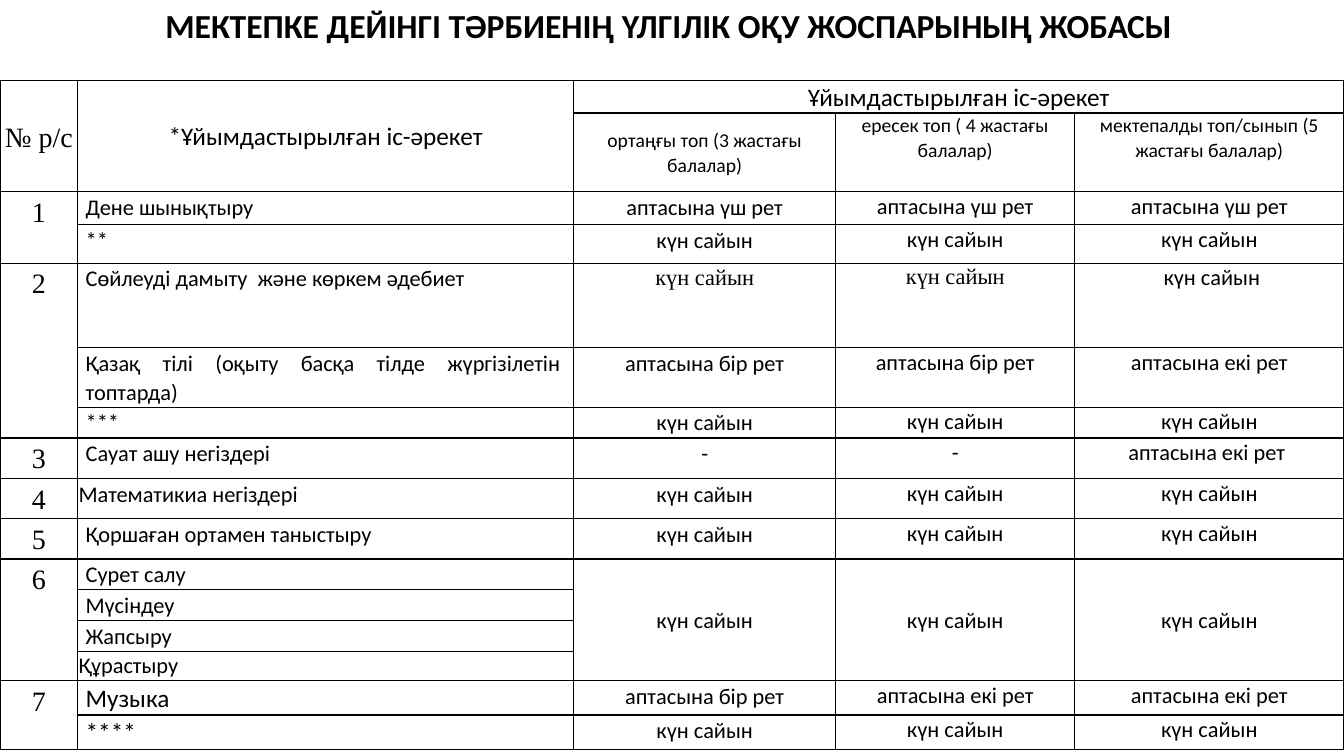
import pptx
import pptx.dml.color
import pptx.enum.text
import pptx.oxml
import pptx.util

Inches, Pt = pptx.util.Inches, pptx.util.Pt
ALIGN, ANCHOR = pptx.enum.text.PP_ALIGN, pptx.enum.text.MSO_ANCHOR

THEME = {
    "ink": "000000", "sans": "Calibri", "serif": "Times New Roman", "border": 1,
    "title": 24, "number": 20, "heading": 18, "body": 16, "group": 14,
}

DAILY, ONCE, TWICE, THRICE = "күн сайын", "аптасына бір рет", "аптасына екі рет", "аптасына үш рет"
ACTIVITY = "Ұйымдастырылған іс-әрекет"

columns = [0.77, 4.92, 2.6, 2.37, 2.67]
rows = [
    (0.31, "№ р/с", "*" + ACTIVITY, ACTIVITY, "", ""),
    (0.78, "", "", "ортаңғы топ (3 жастағы балалар)", "ересек топ ( 4 жастағы балалар)",
     "мектепалды топ/сынып (5 жастағы балалар)"),
    (0.33, "1", "Дене шынықтыру", THRICE, THRICE, THRICE),
    (0.38, "", "**", DAILY, DAILY, DAILY),
    (0.84, "2", "Сөйлеуді дамыту  және көркем әдебиет", DAILY, DAILY, " " + DAILY),
    (0.58, "", "Қазақ тілі (оқыту басқа тілде жүргізілетін топтарда)", ONCE, ONCE, TWICE),
    (0.29, "", "***", DAILY, DAILY, DAILY),
    (0.4, "3", "Сауат ашу негіздері", "-", "-", TWICE + " "),
    (0.4, "4", "Математикиа негіздері", DAILY, DAILY, DAILY),
    (0.4, "5", "Қоршаған ортамен таныстыру", DAILY, DAILY, DAILY),
    (0.3, "6", "Сурет салу ", DAILY, DAILY, DAILY),
    (0.29, "", "Мүсіндеу", "", "", ""),
    (0.3, "", "Жапсыру", "", "", ""),
    (0.29, "", "Құрастыру", "", "", ""),
    (0.33, "7", "Музыка", ONCE, TWICE, TWICE),
    (0.34, "", "****", DAILY, DAILY, DAILY),
]
spans = [(0, 0, 1, 0), (0, 1, 1, 1), (0, 2, 0, 4), (2, 0, 3, 0), (4, 0, 6, 0), (14, 0, 15, 0)]
spans += [(10, column, 13, column) for column in (0, 2, 3, 4)]


def apply_format(target, values):
    for name, value in values.items():
        setattr(target, name, value)


def write_text(para, text, size, font):
    span = para.add_run()
    span.text = text
    apply_format(span.font, {"size": Pt(size), "name": font})
    span.font.color.rgb = pptx.dml.color.RGBColor.from_string(THEME["ink"])
    return span


deck = pptx.Presentation()
apply_format(deck, {"slide_width": Inches(13.33), "slide_height": Inches(7.5)})
page = deck.slides.add_slide(deck.slide_layouts[5])

title = page.shapes.title
apply_format(title, {"left": Inches(0.72), "top": 0, "width": Inches(11.9), "height": Inches(0.5)})
apply_format(title.text_frame, {"word_wrap": True, "vertical_anchor": ANCHOR.TOP})
heading = title.text_frame.paragraphs[0]
heading.alignment = ALIGN.CENTER
write_text(heading, "МЕКТЕПКЕ ДЕЙІНГІ ТӘРБИЕНІҢ ҮЛГІЛІК ОҚУ ЖОСПАРЫНЫҢ ЖОБАСЫ ",
           THEME["title"], THEME["sans"]).font.bold = True

plan = page.shapes.add_table(
    len(rows), len(columns), 0, Inches(0.8),
    Inches(sum(columns)), Inches(sum(row[0] for row in rows))).table
apply_format(plan, {"first_row": False, "horz_banding": False})
for column, width in zip(plan.columns, columns):
    column.width = Inches(width)
for top, left, bottom, right in spans:
    plan.cell(top, left).merge(plan.cell(bottom, right))

for row_index, (height, *texts) in enumerate(rows):
    plan.rows[row_index].height = Inches(height)
    for column_index, text in enumerate(texts):
        cell = plan.cell(row_index, column_index)
        cell.fill.background()
        for order, side in enumerate(("lnL", "lnR", "lnT", "lnB")):
            cell.fill._xPr.insert(order, pptx.oxml.parse_xml(
                f'<a:{side} xmlns:a="http://schemas.openxmlformats.org/drawingml/2006/main" '
                f'w="{Pt(THEME["border"])}"><a:solidFill><a:srgbClr val="{THEME["ink"]}"/>'
                f'</a:solidFill></a:{side}>'))

        is_header = row_index < 2
        is_number = column_index == 0
        is_name = column_index == 1 and not is_header
        is_flush = text in ("Математикиа негіздері", "Құрастыру")
        is_middle = row_index in (0, 10) and (is_header or column_index > 1)
        is_middle = is_middle or (row_index, column_index) == (1, 2)
        is_tight = column_index < 3 and not (is_header and column_index)
        side_gap, end_gap = (0.01, 0.01) if is_tight else (0.06, 0)
        apply_format(cell, {
            "margin_left": Inches(0.08 if is_name and not is_flush else side_gap),
            "margin_right": Inches(0.13 if is_name else side_gap),
            "margin_top": Inches(end_gap),
            "margin_bottom": Inches(end_gap),
            "vertical_anchor": ANCHOR.MIDDLE if is_middle else ANCHOR.TOP,
        })
        if not text:
            continue

        size = THEME["body"]
        if is_number:
            size = THEME["number"]
        elif row_index == 0 or (is_name and row_index > 13):
            size = THEME["heading"]
        elif row_index == 1:
            size = THEME["group"]
        is_serif = is_number or (row_index == 4 and column_index in (2, 3))

        para = cell.text_frame.paragraphs[0]
        apply_format(para, {
            "alignment": ALIGN.LEFT if is_flush else ALIGN.JUSTIFY if is_name else ALIGN.CENTER,
            "line_spacing": 1.15 if is_number else 1.0 if text == "Құрастыру" else 1.05,
            "space_after": Pt(1 if is_number else 0),
        })
        write_text(para, text, size, THEME["serif"] if is_serif else THEME["sans"])

deck.save("out.pptx")
